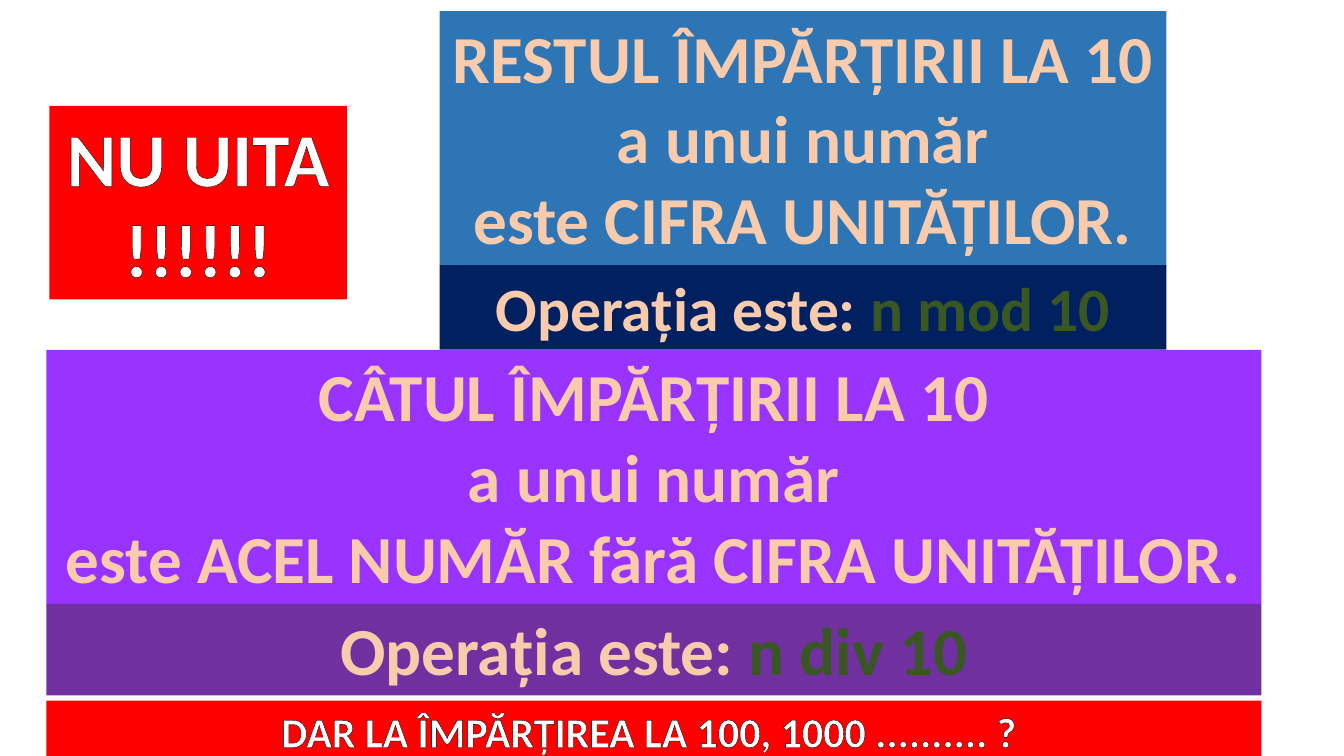
from lxml.etree import SubElement
from pptx import Presentation
from pptx.dml.color import RGBColor
from pptx.enum.shapes import MSO_SHAPE
from pptx.enum.text import MSO_ANCHOR, MSO_AUTO_SIZE, PP_ALIGN
from pptx.oxml.ns import qn
from pptx.util import Inches, Pt

COLORS = {
    "white": "FFFFFF", "black": "000000", "red": "FF0000", "navy": "002060",
    "blue": "2E75B6", "violet": "9933FF", "purple": "7030A0",
    "peach": "F8CBAD", "orange": "ED7D31", "green": "385723",
}

# Columns (left, width) and the row heights of the stacked bands, in inches
NOTE_COL, REST_COL, WIDE_COL = (0.49, 2.95), (4.36, 7.21), (0.46, 12.05)
TOP, RULE_H, MOD_H, DIV_H, QUESTION_H, GAP = 0.11, 2.52, 0.84, 0.91, 0.61, 0.05


def rgb(name):
    return RGBColor.from_string(COLORS[name])


def add_run(p, text, size=48, color="peach", outline="black"):
    """Add a bold run with outlined letters."""
    r = p.add_run()
    r.text = text
    r.font.name = "Calibri"
    r.font.size = Pt(size)
    r.font.bold = True
    r.font.color.rgb = rgb(color)
    rPr = r.font.fill._xPr
    ln = SubElement(rPr, qn("a:ln"), w=str(Pt(1.75)))
    fill = SubElement(ln, qn("a:solidFill"))
    SubElement(fill, qn("a:srgbClr"), val=COLORS[outline])
    rPr.insert(0, ln)


def set_band(sp, column, top, height, fill, wrap=True):
    """Place a filled band and return its text frame."""
    left, width = column
    sp.left, sp.top = Inches(left), Inches(top)
    sp.width, sp.height = Inches(width), Inches(height)
    sp.fill.solid()
    sp.fill.fore_color.rgb = rgb(fill)
    sp.line.fill.background()
    tf = sp.text_frame
    tf.word_wrap = wrap
    tf.auto_size = MSO_AUTO_SIZE.SHAPE_TO_FIT_TEXT
    tf.vertical_anchor = MSO_ANCHOR.TOP
    return tf


def add_band(slide, column, top, height, fill, wrap=True):
    sp = slide.shapes.add_shape(MSO_SHAPE.RECTANGLE, 0, 0, 0, 0)
    sp.shadow.inherit = False
    return set_band(sp, column, top, height, fill, wrap)


def write_lines(tf, lines, **fmt):
    """Write one centred paragraph per line."""
    for i, line in enumerate(lines):
        p = tf.add_paragraph() if i else tf.paragraphs[0]
        p.alignment = PP_ALIGN.CENTER
        add_run(p, line, **fmt)


def write_operation(tf, operation, size):
    write_lines(tf, ["Operația este: "], size=size, outline="orange")
    add_run(tf.paragraphs[0], operation, size=size, color="green", outline="orange")


def main():
    prs = Presentation()
    prs.slide_width, prs.slide_height = Inches(13.33), Inches(7.5)
    slide = prs.slides.add_slide(prs.slide_layouts[5])

    # Reminder
    tf = set_band(slide.shapes.title, NOTE_COL, 1.05, 1.92, "red")
    write_lines(tf, ["NU UITA", "!!!!!!"], size=54, color="white")

    # Remainder rule and its operation
    top = TOP
    tf = add_band(slide, REST_COL, top, RULE_H, "blue", wrap=False)
    write_lines(tf, ["RESTUL ÎMPĂRȚIRII LA 10", "a unui număr",
                     "este CIFRA UNITĂȚILOR."])
    top += RULE_H
    tf = add_band(slide, REST_COL, top, MOD_H, "navy")
    write_operation(tf, "n mod 10", 44)

    # Quotient rule and its operation
    top += MOD_H
    tf = add_band(slide, WIDE_COL, top, RULE_H, "violet")
    write_lines(tf, ["CÂTUL ÎMPĂRȚIRII LA 10", "a unui număr",
                     "este ACEL NUMĂR fără CIFRA UNITĂȚILOR."])
    top += RULE_H
    tf = add_band(slide, WIDE_COL, top, DIV_H, "purple")
    write_operation(tf, "n div 10", 48)

    # Closing question
    top += DIV_H + GAP
    tf = add_band(slide, WIDE_COL, top, QUESTION_H, "red")
    write_lines(tf, ["DAR LA ÎMPĂRȚIREA LA 100, 1000 .......... ? "],
                size=30, color="white")

    prs.save("out.pptx")


if __name__ == "__main__":
    main()
